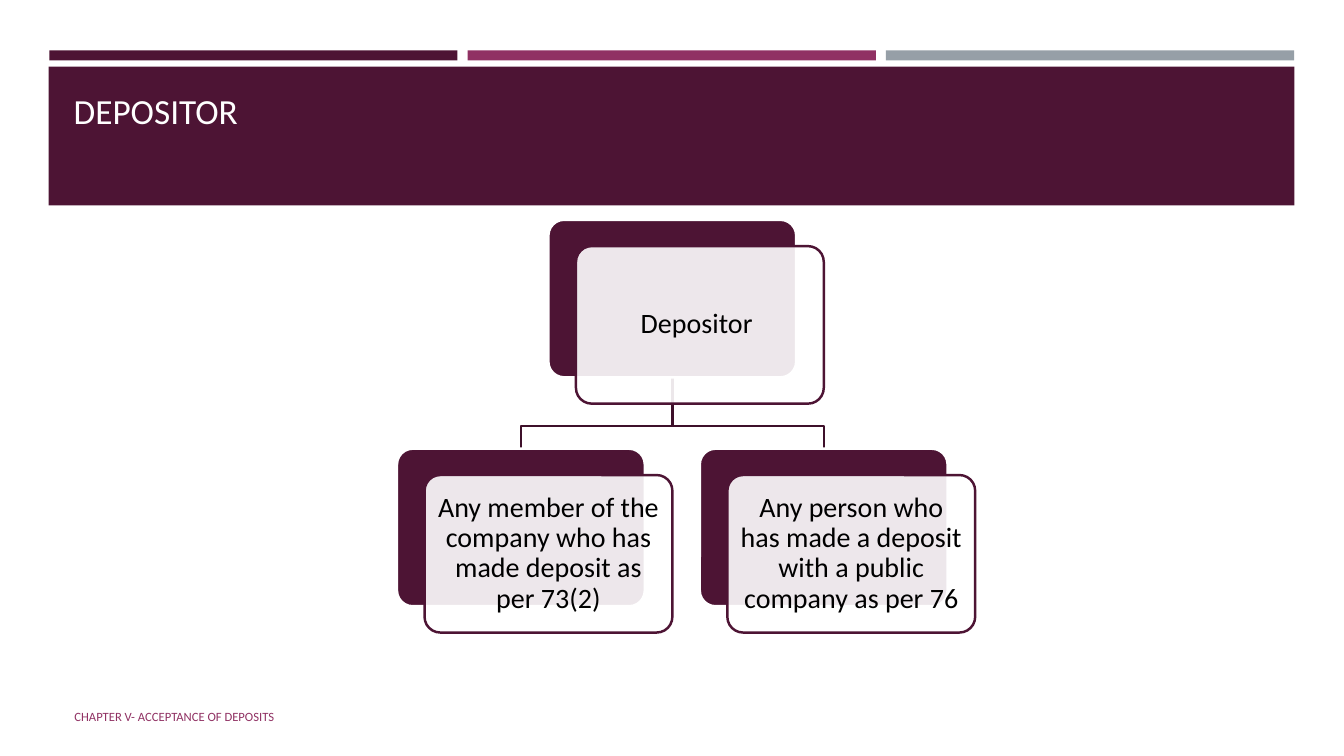
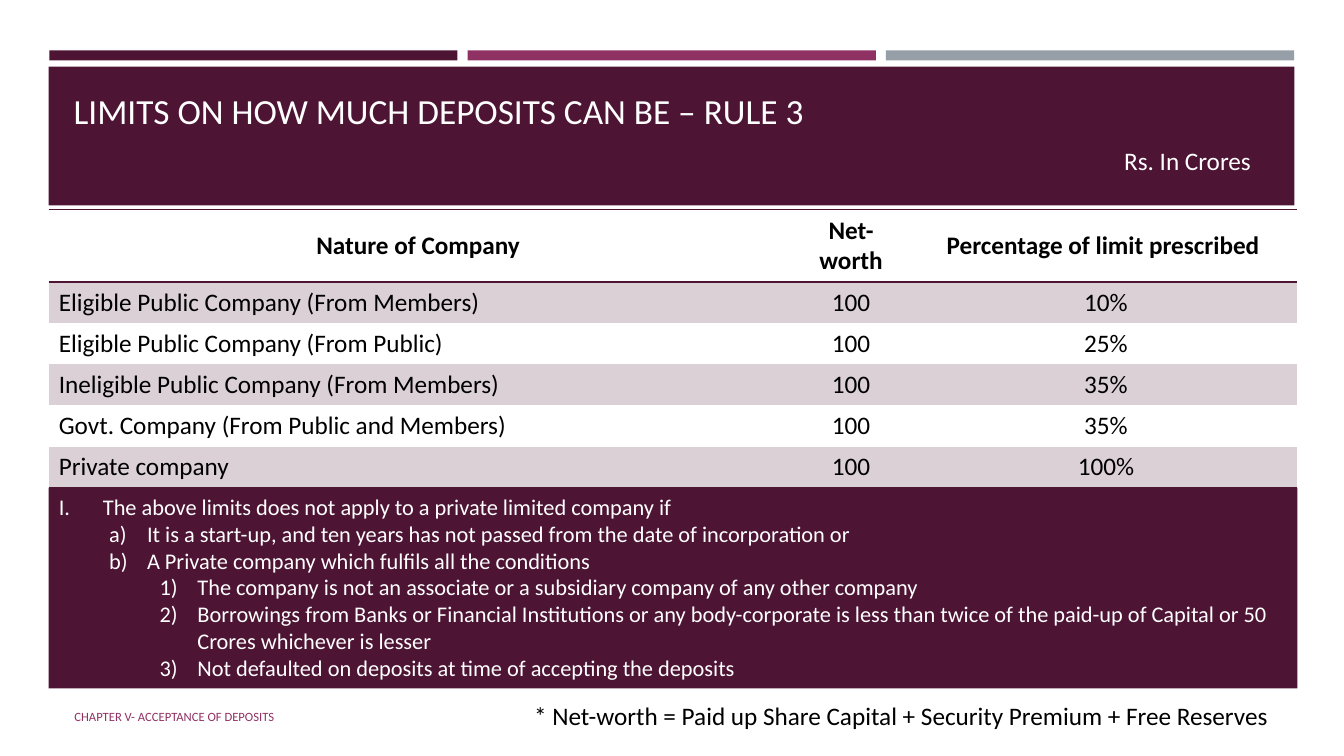
from dataclasses import dataclass
from typing import NamedTuple

from lxml.etree import SubElement
from pptx import Presentation
from pptx.dml.color import RGBColor
from pptx.enum.shapes import MSO_SHAPE as Preset
from pptx.enum.text import MSO_ANCHOR as Anchor, MSO_AUTO_SIZE as AutoSize, PP_ALIGN as Align
from pptx.oxml.ns import qn
from pptx.util import Pt


@dataclass(frozen=True)
class Theme:
    """Colours, font and type sizes of the deck."""
    font: str = "Calibri"
    plum: RGBColor = RGBColor(0x4D, 0x14, 0x34)
    branch: RGBColor = RGBColor(0x3E, 0x10, 0x2A)
    berry: RGBColor = RGBColor(0x90, 0x31, 0x63)
    grey: RGBColor = RGBColor(0x96, 0x9F, 0xA7)
    tint: RGBColor = RGBColor(0xDB, 0xD0, 0xD6)
    white: RGBColor = RGBColor(0xFF, 0xFF, 0xFF)
    black: RGBColor = RGBColor(0, 0, 0)
    title: float = 25.2
    node: float = 20
    text: float = 18
    rule: float = 16
    footer: float = 9
    stroke: float = 1.75


class Box(NamedTuple):
    """A rectangle in points."""
    left: float
    top: float
    width: float
    height: float

    def lengths(self):
        """Return the four sides as slide lengths."""
        return [Pt(value) for value in self]


THEME = Theme()
NO_GRID = "{2D5ABB26-0587-4C30-8999-92F81FD0307C}"
BANDS = Box(35.2, 36, 889.2, 7.2)
HEADER = Box(34.8, 47.6, 889.8, 99.2)
TITLE = Box(45.4, 67.7, 868.3, 30.2)
FOOTER = Box(46.1, 497.5, 544.3, 28.8)
TREE = Box(283.6, 157, 413, 294.8)
UNIT = Box(670.3, 100.1, 230.4, 29)
LIMITS = Box(34.8, 149.8, 892, 198.6)
CONDITIONS = Box(34.8, 348.5, 892, 143.3)
FOOTNOTE = Box(374.4, 496.8, 568, 29)

COLUMNS = (527.8, 90.7, 273.5)
HEADER_ROW = 51.6
LIMIT_ROWS = (
    ("Nature of Company", "Net-worth", "Percentage of limit prescribed "),
    ("Eligible Public Company (From Members)", "100", "10%"),
    ("Eligible Public Company (From Public)", "100", "25%"),
    ("Ineligible Public Company (From Members)", "100", "35%"),
    ("Govt. Company (From Public and Members)", "100", "35%"),
    ("Private company", "100", "100%"),
)
NUMBERING = (
    ("romanUcPeriod", 31.5, 31.5),
    ("alphaLcParenR", 63, 27),
    ("arabicParenR", 99, 27),
)
CONDITION_LINES = (
    (0, "The above limits does not apply to a private limited company if"),
    (1, "It is a start-up, and ten years has not passed from the date of incorporation or"),
    (1, "A Private company which fulfils all the conditions"),
    (2, "The company is not an associate or a subsidiary company of any other company"),
    (2, "Borrowings from Banks or Financial Institutions or any body-corporate is less than "
        "twice of the paid-up of Capital or 50 Crores whichever is lesser"),
    (2, "Not defaulted on deposits at time of accepting the deposits"),
)


def style(para, size, color, align=Align.LEFT, bold=False):
    """Format a whole paragraph."""
    para.alignment = align
    para.font.name = THEME.font
    para.font.size = Pt(size)
    para.font.bold = bold
    para.font.color.rgb = color


def place(shape, box):
    """Move a shape onto a box."""
    shape.left, shape.top, shape.width, shape.height = box.lengths()


def write(shape, text, size, color, align=Align.LEFT, anchor=Anchor.TOP):
    """Put one formatted paragraph in a shape and return it."""
    frame = shape.text_frame
    frame.word_wrap = True
    frame.auto_size = AutoSize.NONE
    frame.vertical_anchor = anchor
    para = frame.paragraphs[0]
    para.text = text
    style(para, size, color, align)
    return para


def add_text(page, box, *args, **options):
    """Add a text box with one paragraph."""
    write(page.shapes.add_textbox(*box.lengths()), *args, **options)


def add_block(page, box, fill, line=None, preset=Preset.RECTANGLE):
    """Add a filled shape without shadow."""
    block = page.shapes.add_shape(preset, *box.lengths())
    block.shadow.inherit = False
    block.fill.solid()
    block.fill.fore_color.rgb = fill
    if line is None:
        block.line.fill.background()
    else:
        block.line.color.rgb = line
        block.line.width = Pt(THEME.stroke)
    return block


def decorate(layout, page):
    """Give the layout its bands and header, built on a page and moved over."""
    for holder in list(layout.placeholders):
        if holder.placeholder_format.idx >= 10:
            holder.element.getparent().remove(holder.element)
    colors = (THEME.plum, THEME.berry, THEME.grey)
    gap = 7.2
    width = (BANDS.width - gap * (len(colors) - 1)) / len(colors)
    blocks = [
        add_block(page, Box(BANDS.left + index * (width + gap), BANDS.top, width, BANDS.height), color)
        for index, color in enumerate(colors)
    ]
    blocks.append(add_block(page, HEADER, THEME.plum))
    for index, block in enumerate(blocks):
        layout.shapes.element.insert(2 + index, block.element)


def add_page(deck, title):
    """Add a page with its title and footer."""
    layout = deck.slide_layouts[1]
    page = deck.slides.add_slide(layout)
    if len(deck.slides) == 1:
        decorate(layout, page)
    place(page.shapes.title, TITLE)
    write(page.shapes.title, title, THEME.title, THEME.white, anchor=Anchor.BOTTOM)
    add_text(page, FOOTER, "CHAPTER V- ACCEPTANCE OF DEPOSITS", THEME.footer, THEME.berry,
             anchor=Anchor.MIDDLE)
    return page


def add_node(page, box, text, shift):
    """Add a dark card with a translucent text card shifted over it."""
    back = add_block(page, box, THEME.plum, THEME.white, Preset.ROUNDED_RECTANGLE)
    front_box = box._replace(left=box.left + shift[0], top=box.top + shift[1])
    front = add_block(page, front_box, THEME.white, THEME.plum, Preset.ROUNDED_RECTANGLE)
    back.adjustments[0] = front.adjustments[0] = 0.1
    SubElement(next(front.element.iter(qn("a:srgbClr"))), qn("a:alpha"), val="90000")
    para = write(front, text, THEME.node, THEME.black, Align.CENTER, Anchor.MIDDLE)
    para.line_spacing = 0.9
    frame = front.text_frame
    frame.margin_left = frame.margin_right = frame.margin_top = frame.margin_bottom = Pt(6)


def add_branch(page, root, child):
    """Draw the bent line from the root card down to a child card."""
    start, end = root.left + root.width / 2, child.left + child.width / 2
    bend = child.top - 16
    builder = page.shapes.build_freeform(Pt(start), Pt(root.top + root.height))
    points = ((start, bend), (end, bend), (end, child.top))
    builder.add_line_segments([(Pt(x), Pt(y)) for x, y in points], close=False)
    branch = builder.convert_to_shape()
    branch.shadow.inherit = False
    branch.fill.background()
    branch.line.color.rgb = THEME.branch
    branch.line.width = Pt(THEME.stroke)


def add_tree(page, box, root_text, child_texts):
    """Fill a box with a root card centred over a row of child cards."""
    shift, gap, drop = (19.7, 18.8), 39.3, 51
    count = len(child_texts)
    width = (box.width - shift[0] - gap * (count - 1)) / count
    height = (box.height - shift[1] - drop) / 2
    root = Box(box.left + (box.width - shift[0] - width) / 2, box.top, width, height)
    children = [
        Box(box.left + index * (width + gap), box.top + height + drop, width, height)
        for index in range(count)
    ]
    for child in children:
        add_branch(page, root, child)
    for node, text in zip([root, *children], [root_text, *child_texts]):
        add_node(page, node, text, shift)


def add_border(cell, side):
    """Draw one cell border, named by its line tag."""
    line = SubElement(cell._tc.get_or_add_tcPr(), qn(side), w=str(Pt(1)))
    SubElement(SubElement(line, qn("a:solidFill")), qn("a:srgbClr"), val=str(THEME.plum))


def add_limits(page, box):
    """Add the table of deposit limits."""
    frame = page.shapes.add_table(len(LIMIT_ROWS), len(COLUMNS), *box.lengths())
    next(frame.element.iter(qn("a:tableStyleId"))).text = NO_GRID
    table = frame.table
    for column, width in zip(table.columns, COLUMNS):
        column.width = Pt(width)
    last = len(LIMIT_ROWS) - 1
    for row, texts in enumerate(LIMIT_ROWS):
        table.rows[row].height = Pt((box.height - HEADER_ROW) / last if row else HEADER_ROW)
        for column, text in enumerate(texts):
            cell = table.cell(row, column)
            cell.vertical_anchor = Anchor.MIDDLE
            para = cell.text_frame.paragraphs[0]
            para.text = text
            align = Align.LEFT if row and not column else Align.CENTER
            style(para, THEME.text, THEME.black, align, bold=row == 0)
            if row == 0:
                add_border(cell, "a:lnT")
            if row in (0, last):
                add_border(cell, "a:lnB")
            if row % 2:
                cell.fill.solid()
                cell.fill.fore_color.rgb = THEME.tint
            else:
                cell.fill.background()


def fill_conditions(body, box):
    """Turn the body placeholder into the numbered list of conditions."""
    place(body, box)
    body.fill.solid()
    body.fill.fore_color.rgb = THEME.plum
    frame = body.text_frame
    frame.auto_size = AutoSize.NONE
    frame.vertical_anchor = Anchor.TOP
    for index, (level, text) in enumerate(CONDITION_LINES):
        para = frame.add_paragraph() if index else frame.paragraphs[0]
        para.text = text
        para.level = level
        para.space_before = Pt(0)
        style(para, THEME.rule, THEME.white)
        scheme, margin, hang = NUMBERING[level]
        props = para._p.get_or_add_pPr()
        props.set("marL", str(Pt(margin)))
        props.set("indent", str(-Pt(hang)))
        SubElement(props, qn("a:buFont"), typeface=THEME.font)
        SubElement(props, qn("a:buAutoNum"), type=scheme)


def add_depositor_page(deck):
    """Build the page that shows who is a depositor."""
    page = add_page(deck, "DEPOSITOR")
    body = page.placeholders[1].element
    body.getparent().remove(body)
    add_tree(page, TREE, "Depositor ", (
        "Any member of the company who has made deposit as per 73(2)",
        "Any person who has made a deposit with a public company as per 76",
    ))


def add_limits_page(deck):
    """Build the page with the limits and their conditions."""
    page = add_page(deck, "LIMITS ON HOW MUCH DEPOSITS CAN BE – RULE 3")
    add_limits(page, LIMITS)
    add_text(page, FOOTNOTE, "* Net-worth = Paid up Share Capital + Security Premium + Free Reserves",
             THEME.text, THEME.black)
    fill_conditions(page.placeholders[1], CONDITIONS)
    add_text(page, UNIT, "Rs. In Crores", THEME.text, THEME.white, Align.RIGHT)


def main():
    """Build and save the deck."""
    deck = Presentation()
    deck.slide_width, deck.slide_height = Pt(960), Pt(540)
    add_depositor_page(deck)
    add_limits_page(deck)
    deck.save("out.pptx")


if __name__ == "__main__":
    main()
